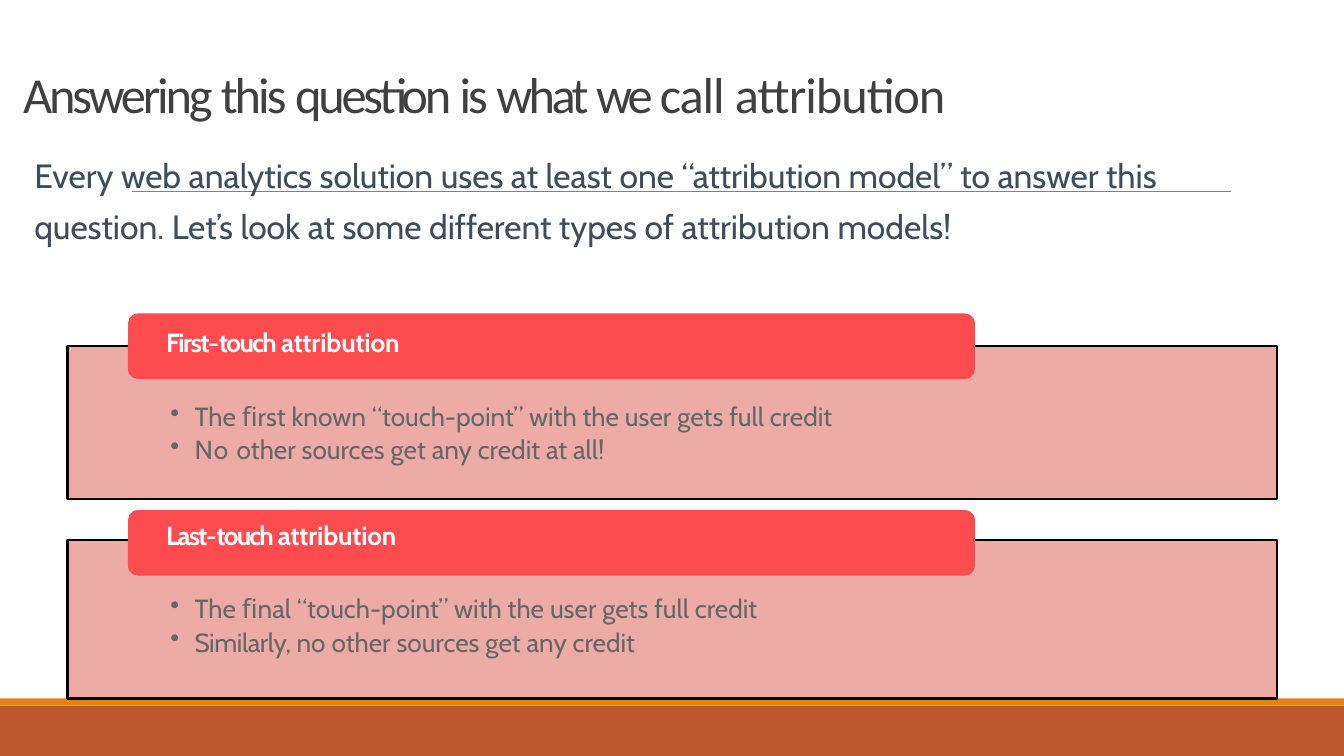
from lxml import etree
from pptx import Presentation
from pptx.dml.color import RGBColor
from pptx.enum.shapes import MSO_CONNECTOR, MSO_SHAPE
from pptx.enum.text import MSO_ANCHOR, PP_ALIGN
from pptx.oxml.ns import qn
from pptx.util import Inches, Pt

RECTANGLE = MSO_SHAPE.RECTANGLE
ROUNDED = MSO_SHAPE.ROUNDED_RECTANGLE
STRAIGHT = MSO_CONNECTOR.STRAIGHT
TOP, BOTTOM = MSO_ANCHOR.TOP, MSO_ANCHOR.BOTTOM
LEFT = PP_ALIGN.LEFT

COLORS = {
    "footer": "BD582C", "stripe": "E48312", "rule": "808080",
    "panel": "EDABA5", "outline": "000000", "label": "FC4C50",
    "title": "404040", "intro": "3E4D5A", "heading": "FFFFFF", "body": "666666",
}

TITLE = [("Answering ", -2.3), ("this ", -2.1), ("question ", -2.3), ("is ", -2.1),
         ("what ", -2.6), ("we ", -3), ("call ", -0.8), ("attribution", -0.7)]
INTRO = [("Every web analytics solution uses at least one “attribution model” to answer this "
          "question. Let’s look at some different types of attribution models!", 0)]
MODELS = [
    {"panel": (3.43, 1.52), "label": 3.11, "heading_inset": 0.1, "body_inset": 0.54,
     "heading": [("First-", -1), ("touch ", -1.2), ("attribution", -0.1)],
     "points": [[("The ﬁrst known “touch-point” with the user gets full credit", 0)],
                [("No ", 0.9), ("other sources get any credit at all!", 0)]]},
    {"panel": (5.36, 1.57), "label": 5.06, "heading_inset": 0.06, "body_inset": 0.52,
     "heading": [("Last-", -1.2), ("touch ", -1.3), ("attribution", -0.1)],
     "points": [[("The ﬁnal “touch-point” with the user gets full credit", 0)],
                [("Similarly, ", -0.3), ("no other sources get any credit", 0)]]},
]


def rgb(name):
    return RGBColor.from_string(COLORS[name])


def add_block(slide, kind, box, fill, outline=None):
    block = slide.shapes.add_shape(kind, *map(Inches, box))
    block.shadow.inherit = False
    block.fill.solid()
    block.fill.fore_color.rgb = rgb(fill)
    if outline:
        block.line.color.rgb = rgb(outline)
        block.line.width = Pt(1.5)
    else:
        block.line.fill.background()
    return block


def add_rule(slide, left, right, y):
    rule = slide.shapes.add_connector(
        STRAIGHT, Inches(left), Inches(y), Inches(right), Inches(y))
    rule.line.color.rgb = rgb("rule")
    rule.line.width = Pt(0.5)
    etree.SubElement(rule._element.spPr, qn("a:effectLst"))


def set_frame(frame, left, top, anchor=TOP):
    frame.word_wrap = True
    frame.vertical_anchor = anchor
    frame.margin_left, frame.margin_top = Inches(left), Inches(top)
    frame.margin_right = frame.margin_bottom = 0


def write(paragraph, pieces, font, size, color, bold=False):
    paragraph.alignment = LEFT
    paragraph.font.name = font
    paragraph.font.size = Pt(size)
    paragraph.font.bold = bold
    paragraph.font.color.rgb = rgb(color)
    for text, tracking in pieces:
        run = paragraph.add_run()
        run.text = text
        if tracking:
            run.font._element.set("spc", str(round(tracking * 100)))


def add_bullet(paragraph, indent, hanging):
    properties = paragraph._p.get_or_add_pPr()
    properties.set("marL", str(Inches(indent)))
    properties.set("indent", str(-Inches(hanging)))
    bullet = etree.Element(qn("a:buChar"), char="•")
    defaults = properties.find(qn("a:defRPr"))
    defaults.addprevious(bullet)


def add_text(slide, box, pieces, font, size, color, spacing, before, anchor=TOP):
    frame = slide.shapes.add_textbox(*map(Inches, box)).text_frame
    set_frame(frame, 0.02, 0.02, anchor)
    paragraph = frame.paragraphs[0]
    write(paragraph, pieces, font, size, color)
    paragraph.line_spacing = spacing
    paragraph.space_before = Pt(before)


def add_model(slide, model):
    top, height = model["panel"]
    panel = add_block(slide, RECTANGLE, (0.67, top, 12, height), "panel", "outline")
    body = panel.text_frame
    set_frame(body, 0, model["body_inset"])
    for index, point in enumerate(model["points"]):
        paragraph = body.add_paragraph() if index else body.paragraphs[0]
        write(paragraph, point, "Cabin", 18.7, "body")
        add_bullet(paragraph, 1.26, 0.24)
        if index:
            paragraph.space_before = Pt(1.3)

    label = add_block(slide, ROUNDED, (1.27, model["label"], 8.4, 0.65), "label")
    label.adjustments[0] = 0.15
    set_frame(label.text_frame, 0.35, model["heading_inset"])
    write(label.text_frame.paragraphs[0], model["heading"], "Cabin", 18.7, "heading", True)


def main():
    deck = Presentation()
    deck.slide_width, deck.slide_height = Inches(13.33), Inches(7.5)
    slide = deck.slides.add_slide(deck.slide_layouts[6])
    add_block(slide, RECTANGLE, (0, 7, 13.33, 0.5), "footer")
    add_block(slide, RECTANGLE, (0, 6.93, 13.33, 0.07), "stripe")
    add_rule(slide, 1.31, 12.21, 1.9)
    for model in MODELS:
        add_model(slide, model)
    add_text(slide, (0.32, 1.42, 11.56, 1.1), INTRO, "Cabin", 24, "intro", 1.25, 1.3)
    add_text(slide, (0.21, 0.59, 11.67, 0.64), TITLE, "Calibri", 36, "title",
             Pt(45.3), 0.5, BOTTOM)
    deck.save("out.pptx")


if __name__ == "__main__":
    main()
